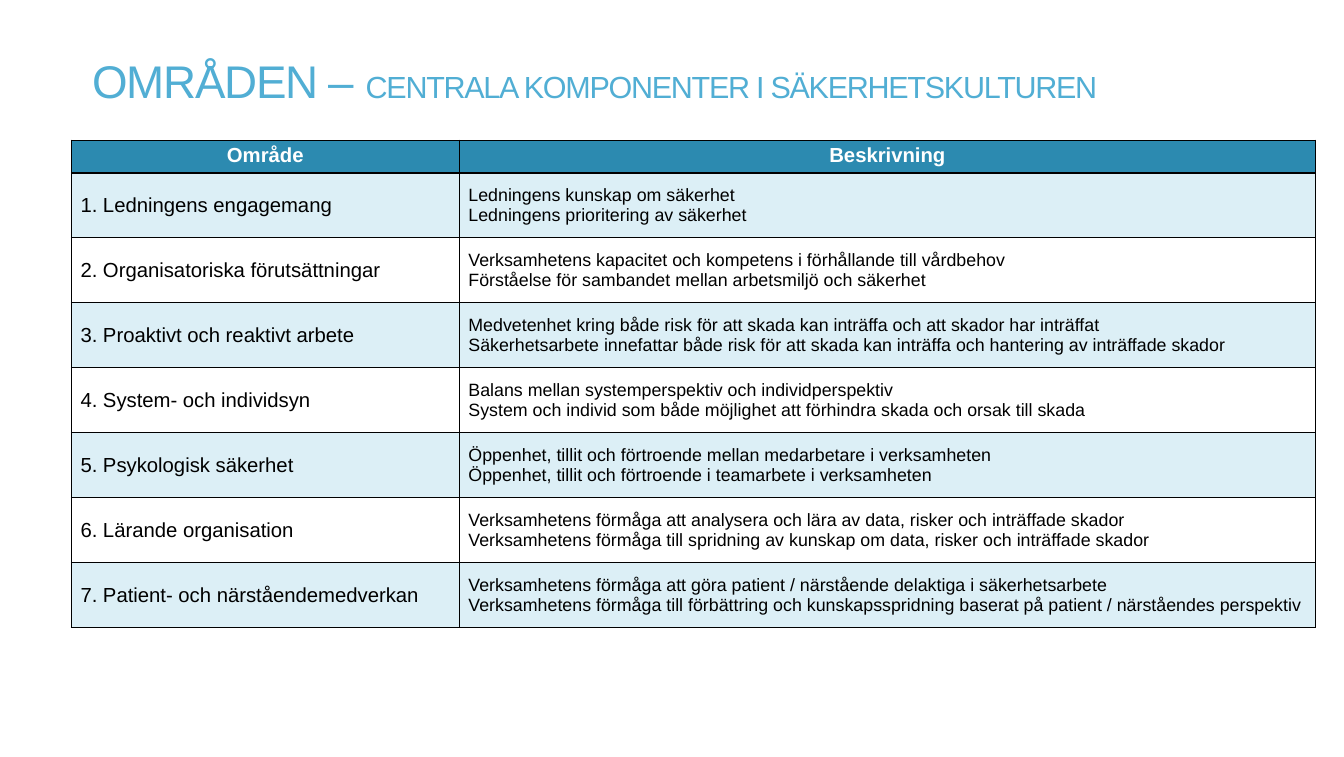
from dataclasses import dataclass

from lxml.etree import SubElement
from pptx import Presentation
from pptx.dml.color import RGBColor
from pptx.enum.text import MSO_ANCHOR, MSO_AUTO_SIZE, PP_ALIGN
from pptx.oxml.ns import qn
from pptx.slide import Slide
from pptx.table import _Cell
from pptx.util import Emu, Pt

PX = 9144  # EMU per px, 100 px to the inch
FONT = "Arial"
BLACK = RGBColor(0x00, 0x00, 0x00)
WHITE = RGBColor(0xFF, 0xFF, 0xFF)
HEADER_BLUE = RGBColor(0x2C, 0x8A, 0xB0)
BAND_BLUE = RGBColor(0xDC, 0xEF, 0xF6)
TITLE_BLUE = RGBColor(0x51, 0xAE, 0xD4)

COLUMN_WIDTHS = (424, 936)
HEADER_HEIGHT, ROW_HEIGHT = 36, 71
HEADERS = ("Område", "Beskrivning")


@dataclass(frozen=True)
class Area:
    name: str
    description: str


AREAS = (
    Area("1. Ledningens engagemang",
         "Ledningens kunskap om säkerhet\n"
         "Ledningens prioritering av säkerhet"),
    Area("2. Organisatoriska förutsättningar",
         "Verksamhetens kapacitet och kompetens i förhållande till vårdbehov\n"
         "Förståelse för sambandet mellan arbetsmiljö och säkerhet"),
    Area("3. Proaktivt och reaktivt arbete",
         "Medvetenhet kring både risk för att skada kan inträffa och att skador har inträffat\n"
         "Säkerhetsarbete innefattar både risk för att skada kan inträffa och hantering av inträffade skador"),
    Area("4. System- och individsyn",
         "Balans mellan systemperspektiv och individperspektiv\n"
         "System och individ som både möjlighet att förhindra skada och orsak till skada"),
    Area("5. Psykologisk säkerhet",
         "Öppenhet, tillit och förtroende mellan medarbetare i verksamheten\n"
         "Öppenhet, tillit och förtroende i teamarbete i verksamheten"),
    Area("6. Lärande organisation",
         "Verksamhetens förmåga att analysera och lära av data, risker och inträffade skador\n"
         "Verksamhetens förmåga till spridning av kunskap om data, risker och inträffade skador"),
    Area("7. Patient- och närståendemedverkan",
         "Verksamhetens förmåga att göra patient / närstående delaktiga i säkerhetsarbete\n"
         "Verksamhetens förmåga till förbättring och kunskapsspridning baserat på patient / närståendes perspektiv"),
)


def px(n: int) -> Emu:
    return Emu(n * PX)


def add_borders(cell: _Cell) -> None:
    """Add 1 pt black borders; call before the fill, which must follow them."""
    tc_pr = cell._tc.get_or_add_tcPr()
    for side in ("lnL", "lnR", "lnT", "lnB"):
        ln = SubElement(tc_pr, qn(f"a:{side}"), w=str(Pt(1)))
        fill = SubElement(ln, qn("a:solidFill"))
        SubElement(fill, qn("a:srgbClr"), val=str(BLACK))


def fill_cell(cell: _Cell, text: str, size: int, fill: RGBColor, header: bool = False) -> None:
    add_borders(cell)
    cell.fill.solid()
    cell.fill.fore_color.rgb = fill
    cell.vertical_anchor = MSO_ANCHOR.TOP if header else MSO_ANCHOR.MIDDLE
    cell.text_frame.text = text
    for p in cell.text_frame.paragraphs:
        p.alignment = PP_ALIGN.CENTER if header else PP_ALIGN.LEFT
        for r in p.runs:
            r.font.name = FONT
            r.font.size = Pt(size)
            r.font.bold = header
            r.font.color.rgb = WHITE if header else BLACK


def add_title(s: Slide) -> None:
    title = s.shapes.title
    title.left, title.top, title.width, title.height = map(px, (101, 48, 1276, 88))
    tf = title.text_frame
    tf.margin_left = tf.margin_top = tf.margin_right = tf.margin_bottom = 0
    tf.vertical_anchor = MSO_ANCHOR.TOP
    tf.auto_size = MSO_AUTO_SIZE.NONE
    tf.word_wrap = True
    p = tf.paragraphs[0]
    p.alignment = PP_ALIGN.LEFT
    p.line_spacing = Pt(50)
    for text, size in (("OMRÅDEN – ", 36), ("CENTRALA KOMPONENTER I SÄKERHETSKULTUREN", 24)):
        r = p.add_run()
        r.text = text
        r.font.name = FONT
        r.font.size = Pt(size)
        r.font.color.rgb = TITLE_BLUE
        r.font._element.set("spc", "-100")


def add_area_table(s: Slide) -> None:
    height = HEADER_HEIGHT + ROW_HEIGHT * len(AREAS)
    table = s.shapes.add_table(len(AREAS) + 1, len(HEADERS), px(78), px(153),
                               px(sum(COLUMN_WIDTHS)), px(height)).table
    for column, width in zip(table.columns, COLUMN_WIDTHS):
        column.width = px(width)
    table.rows[0].height = px(HEADER_HEIGHT)
    for col, text in enumerate(HEADERS):
        fill_cell(table.cell(0, col), text, 16, HEADER_BLUE, header=True)
    for row, area in enumerate(AREAS, start=1):
        table.rows[row].height = px(ROW_HEIGHT)
        band = BAND_BLUE if row % 2 else WHITE
        fill_cell(table.cell(row, 0), area.name, 16, band)
        fill_cell(table.cell(row, 1), area.description, 14, band)


def main() -> None:
    prs = Presentation()
    prs.slide_width, prs.slide_height = px(1469), px(827)
    s = prs.slides.add_slide(prs.slide_layouts[5])
    add_title(s)
    add_area_table(s)
    prs.save("out.pptx")


if __name__ == "__main__":
    main()
